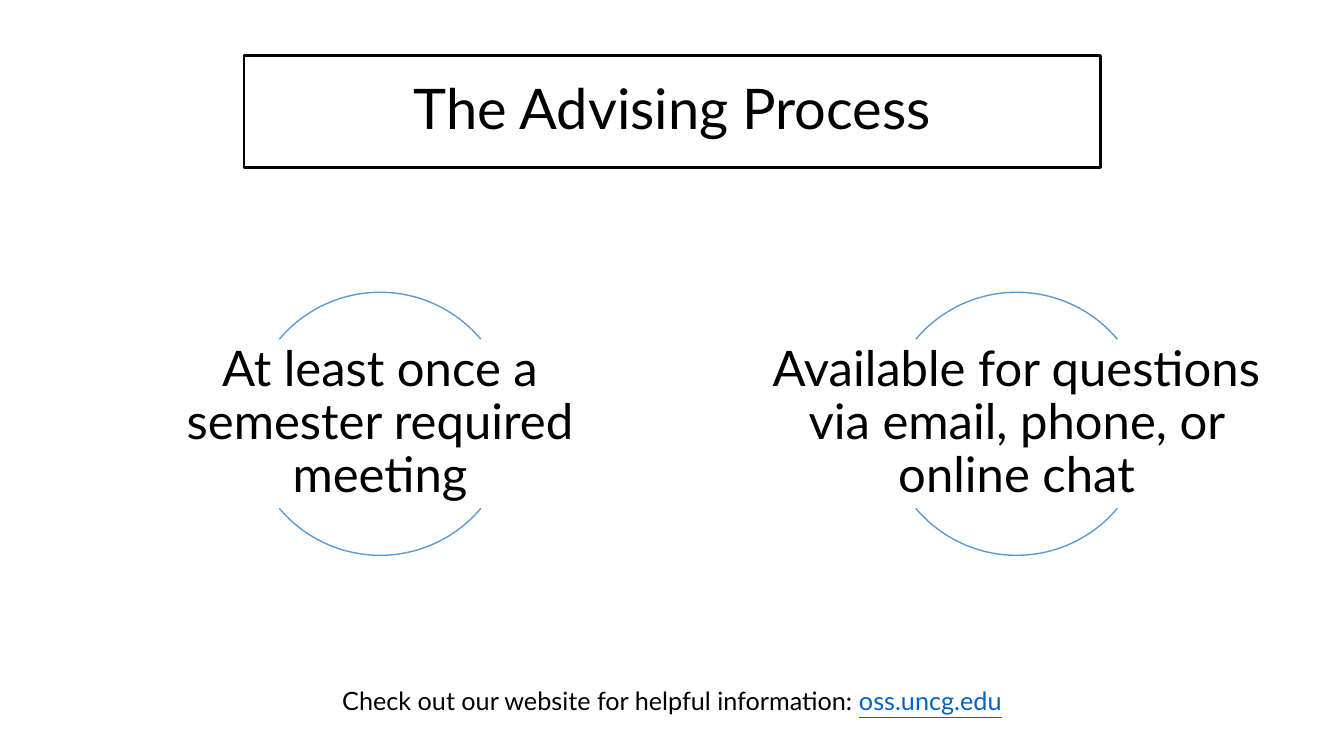
from lxml.etree import SubElement
from pptx import Presentation
from pptx.dml.color import RGBColor
from pptx.enum.shapes import MSO_SHAPE
from pptx.enum.text import MSO_ANCHOR, MSO_AUTO_SIZE, PP_ALIGN
from pptx.oxml.ns import qn
from pptx.util import Cm, Pt

COLORS = {"text": "000000", "paper": "FFFFFF", "arc": "5B9BD5", "link": "0563C1"}
FONT = "Lato"
SLIDE_W, SLIDE_H = 33.87, 19.05
ARC_SIZE = 6.63
ARC_ANGLES = [(220, 320), (40, 140)]
DEGREE = 0.6
STEPS = [
    "At least once a semester required meeting",
    "Available for questions via email, phone, or online chat",
]


def color(name):
    """Return the named colour of the slide."""
    return RGBColor.from_string(COLORS[name])


def style_run(r, size, name="text"):
    """Set font, size and colour of a run."""
    r.font.name = FONT
    r.font.size = Pt(size)
    r.font.color.rgb = color(name)


def fill_text(tf, text, size, spacing=0.9):
    """Write one centred paragraph in the middle of a frame."""
    tf.word_wrap = True
    tf.vertical_anchor = MSO_ANCHOR.MIDDLE
    tf.text = text
    p = tf.paragraphs[0]
    p.alignment = PP_ALIGN.CENTER
    p.line_spacing = spacing
    style_run(p.runs[0], size)
    return p


def add_title(s, text, x, y, w, h):
    """Draw the framed title on a nearly clear white fill."""
    sp = s.shapes.add_shape(MSO_SHAPE.RECTANGLE, Cm(x), Cm(y), Cm(w), Cm(h))
    sp.shadow.inherit = False
    sp.fill.solid()
    sp.fill.fore_color.rgb = color("paper")
    paper = sp.fill._xPr.find(qn("a:solidFill")).find(qn("a:srgbClr"))
    SubElement(paper, qn("a:alpha"), val="10000")
    sp.line.color.rgb = color("text")
    sp.line.width = Pt(2)
    fill_text(sp.text_frame, text, 40)


def add_step(s, text, x, y, w, h):
    """Draw a step text with an arc above and below its centre."""
    arc_x = x + (w - ARC_SIZE) / 2
    arc_y = y + (h - ARC_SIZE) / 2
    for start, end in ARC_ANGLES:
        sp = s.shapes.add_shape(
            MSO_SHAPE.ARC, Cm(arc_x), Cm(arc_y), Cm(ARC_SIZE), Cm(ARC_SIZE))
        sp.shadow.inherit = False
        sp.fill.background()
        sp.line.color.rgb = color("arc")
        sp.line.width = Pt(1)
        sp.adjustments[0] = start * DEGREE
        sp.adjustments[1] = end * DEGREE
    tf = s.shapes.add_textbox(Cm(x), Cm(y), Cm(w), Cm(h)).text_frame
    tf.margin_left = tf.margin_right = tf.margin_top = tf.margin_bottom = Cm(0.05)
    fill_text(tf, text, 35)


def add_footer(s, text, address, x, y, w, h):
    """Write the closing line with its underlined web address."""
    tf = s.shapes.add_textbox(Cm(x), Cm(y), Cm(w), Cm(h)).text_frame
    p = fill_text(tf, text, 18, 1.0)
    tf.vertical_anchor = MSO_ANCHOR.TOP
    tf.auto_size = MSO_AUTO_SIZE.SHAPE_TO_FIT_TEXT
    r = p.add_run()
    r.text = address
    style_run(r, 18, "link")
    r.font.underline = True


def main():
    """Build the advising slide and save it."""
    prs = Presentation()
    prs.slide_width, prs.slide_height = Cm(SLIDE_W), Cm(SLIDE_H)
    s = prs.slides.add_slide(prs.slide_layouts[6])
    add_title(s, "The Advising Process", 6.15, 1.4, 21.59, 2.82)
    for i, text in enumerate(STEPS):
        add_step(s, text, 2.95 + i * 16.04, 8.56, 13.26, 4.24)
    add_footer(s, "Check out our website for helpful information: ",
               "oss.uncg.edu", 0, 17.15, SLIDE_W, 1.02)
    prs.save("out.pptx")


if __name__ == "__main__":
    main()
